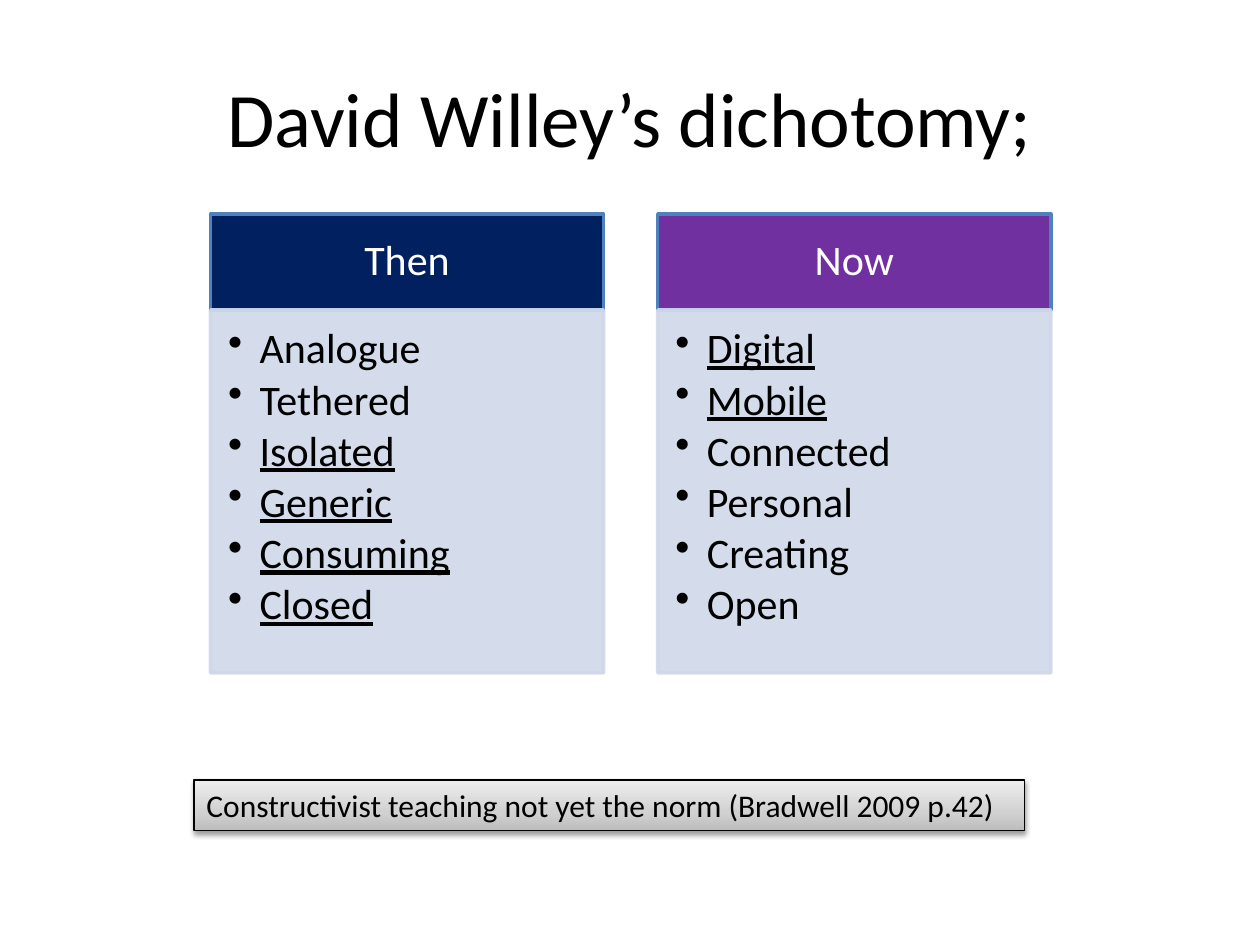
from dataclasses import dataclass

from lxml import etree
from pptx import Presentation
from pptx.dml.color import RGBColor
from pptx.enum.shapes import MSO_SHAPE
from pptx.enum.text import MSO_ANCHOR, PP_ALIGN
from pptx.oxml.ns import qn
from pptx.util import Inches, Pt

RECTANGLE = MSO_SHAPE.RECTANGLE
TOP, MIDDLE = MSO_ANCHOR.TOP, MSO_ANCHOR.MIDDLE
LEFT, CENTER = PP_ALIGN.LEFT, PP_ALIGN.CENTER


@dataclass(frozen=True)
class Theme:
    font: str = "Calibri"
    title_size: int = 44
    body_size: int = 24
    note_size: int = 18
    black: str = "000000"
    white: str = "FFFFFF"
    navy: str = "002060"
    purple: str = "7030A0"
    header_line: str = "4F81BD"
    panel: str = "D0D8E8"
    panel_opacity: int = 90
    note_stops: tuple = ((0, "BDBDBD"), (35, "D1D1D1"), (100, "EEEEEE"))
    shadow_opacity: int = 38


THEME = Theme()

# Column heading, heading colour, (item, underlined) pairs
COLUMNS = [
    ("Then", THEME.navy, [
        ("Analogue", False), ("Tethered", False), ("Isolated", True),
        ("Generic", True), ("Consuming", True), ("Closed", True)]),
    ("Now", THEME.purple, [
        ("Digital", True), ("Mobile", True), ("Connected", False),
        ("Personal", False), ("Creating", False), ("Open", False)]),
]


def add_element(parent, tag, **attributes):
    values = {name: str(value) for name, value in attributes.items()}
    return etree.SubElement(parent, qn(tag), values)


def set_opacity(fill, percent):
    color = fill._xPr.find(qn("a:solidFill"))[0]
    add_element(color, "a:alpha", val=percent * 1000)


def style_paragraph(paragraph, size, color, alignment=LEFT):
    paragraph.alignment = alignment
    paragraph.font.name = THEME.font
    paragraph.font.size = Pt(size)
    paragraph.font.color.rgb = RGBColor.from_string(color)


def set_frame(frame, anchor, margins=(0.1, 0.05, 0.1, 0.05)):
    frame.word_wrap = True
    frame.vertical_anchor = anchor
    (frame.margin_left, frame.margin_top,
     frame.margin_right, frame.margin_bottom) = map(Inches, margins)


def add_box(slide, box, fill, line, line_width):
    shape = slide.shapes.add_shape(RECTANGLE, *map(Inches, box))
    shape.shadow.inherit = False
    shape.fill.solid()
    shape.fill.fore_color.rgb = RGBColor.from_string(fill)
    shape.line.color.rgb = RGBColor.from_string(line)
    shape.line.width = Pt(line_width)
    return shape


def add_bullet(paragraph, indent):
    properties = paragraph._p.get_or_add_pPr()
    properties.set("marL", str(Inches(indent)))
    properties.set("indent", str(-Inches(indent)))
    bullet = etree.Element(qn("a:buChar"), char="•")
    properties.insert_element_before(bullet, "a:tabLst", "a:defRPr", "a:extLst")


def add_title(slide, box, text):
    frame = slide.shapes.add_textbox(*map(Inches, box)).text_frame
    set_frame(frame, MIDDLE)
    frame.text = text
    style_paragraph(frame.paragraphs[0], THEME.title_size, THEME.black, CENTER)


def add_column(slide, box, heading, color, items, header_height=0.76):
    left, top, width, height = box

    # Heading
    header = add_box(slide, (left, top, width, header_height),
                     color, THEME.header_line, 2)
    set_frame(header.text_frame, MIDDLE, (0.19, 0.11, 0.19, 0.11))
    header.text_frame.text = heading
    paragraph = header.text_frame.paragraphs[0]
    style_paragraph(paragraph, THEME.body_size, THEME.white, CENTER)
    paragraph.line_spacing = 0.9

    # Bulleted list
    panel = add_box(
        slide, (left, top + header_height, width, height - header_height),
        THEME.panel, THEME.panel, 2)
    set_opacity(panel.fill, THEME.panel_opacity)
    set_opacity(panel.line.fill, THEME.panel_opacity)
    frame = panel.text_frame
    set_frame(frame, TOP, (0.14, 0.14, 0.19, 0.21))
    frame.text = "\n".join(item for item, _ in items)
    for paragraph, (_, underlined) in zip(frame.paragraphs, items):
        style_paragraph(paragraph, THEME.body_size, THEME.black)
        paragraph.runs[0].font.underline = underlined
        paragraph.line_spacing = 0.9
        paragraph.space_after = Pt(3.3)
        add_bullet(paragraph, 0.25)


def add_comparison(slide, box, columns, gap=0.43):
    left, top, width, height = box
    column_width = (width - gap * (len(columns) - 1)) / len(columns)
    for index, column in enumerate(columns):
        column_left = left + index * (column_width + gap)
        add_column(slide, (column_left, top, column_width, height), *column)


def add_note(slide, box, text):
    note = add_box(slide, box, THEME.white, THEME.black, 0.75)

    # Gradient from the bottom edge upwards
    note.fill.gradient()
    note.fill.gradient_angle = 90
    stops = note._element.spPr.find(qn("a:gradFill")).find(qn("a:gsLst"))
    stops.clear()
    for position, color in THEME.note_stops:
        stop = add_element(stops, "a:gs", pos=position * 1000)
        add_element(stop, "a:srgbClr", val=color)

    # Soft shadow below
    effects = note._element.spPr.find(qn("a:effectLst"))
    shadow = add_element(effects, "a:outerShdw", blurRad=Pt(3.1), dist=Pt(1.6),
                         dir=90 * 60000, rotWithShape=0)
    color = add_element(shadow, "a:srgbClr", val=THEME.black)
    add_element(color, "a:alpha", val=THEME.shadow_opacity * 1000)

    set_frame(note.text_frame, TOP)
    note.text_frame.text = text
    style_paragraph(note.text_frame.paragraphs[0], THEME.note_size, THEME.black)


def main():
    presentation = Presentation()
    presentation.slide_width = Inches(10)
    presentation.slide_height = Inches(7.5)
    slide = presentation.slides.add_slide(presentation.slide_layouts[6])
    add_title(slide, (0.5, 0.3, 9, 1.25), "David Willey’s dichotomy;")
    add_comparison(slide, (1.67, 1.7, 6.67, 3.64), COLUMNS)
    add_note(slide, (1.54, 6.19, 6.59, 0.4),
             "Constructivist teaching not yet the norm (Bradwell 2009 p.42)")
    presentation.save("out.pptx")


if __name__ == "__main__":
    main()
